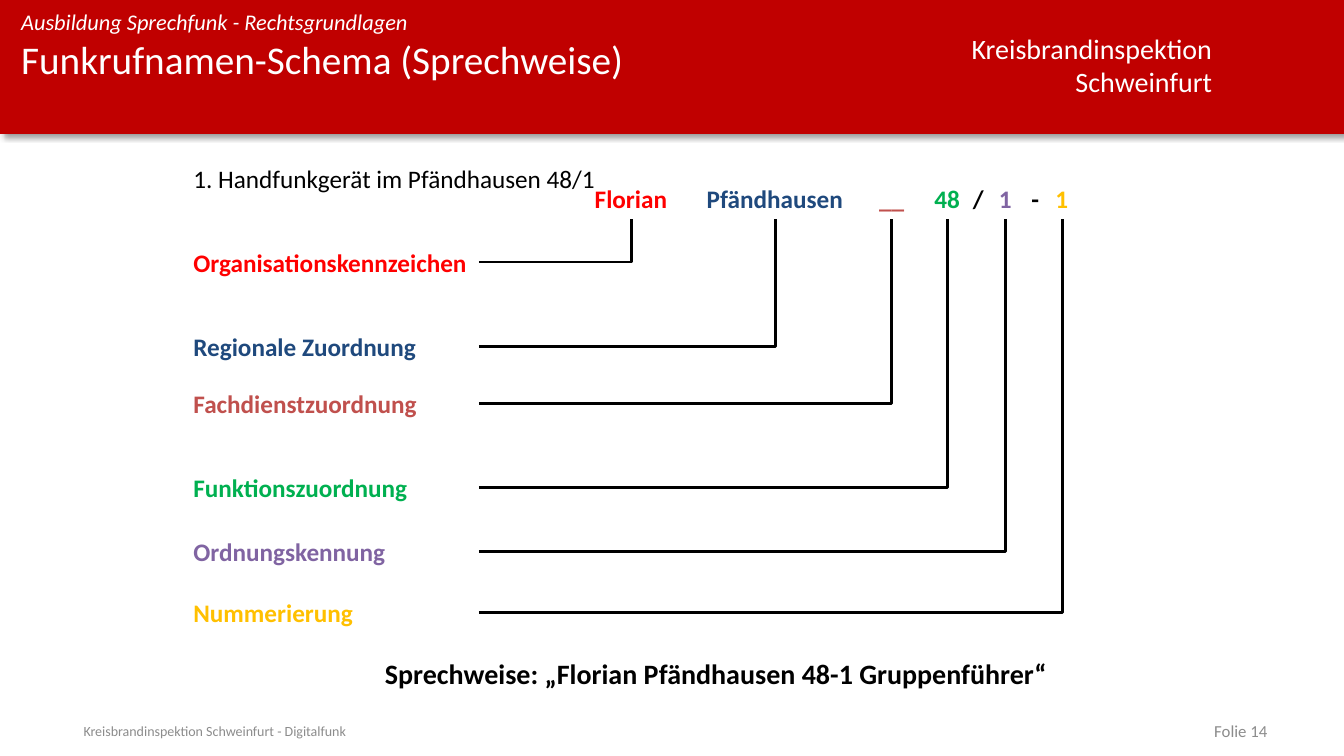
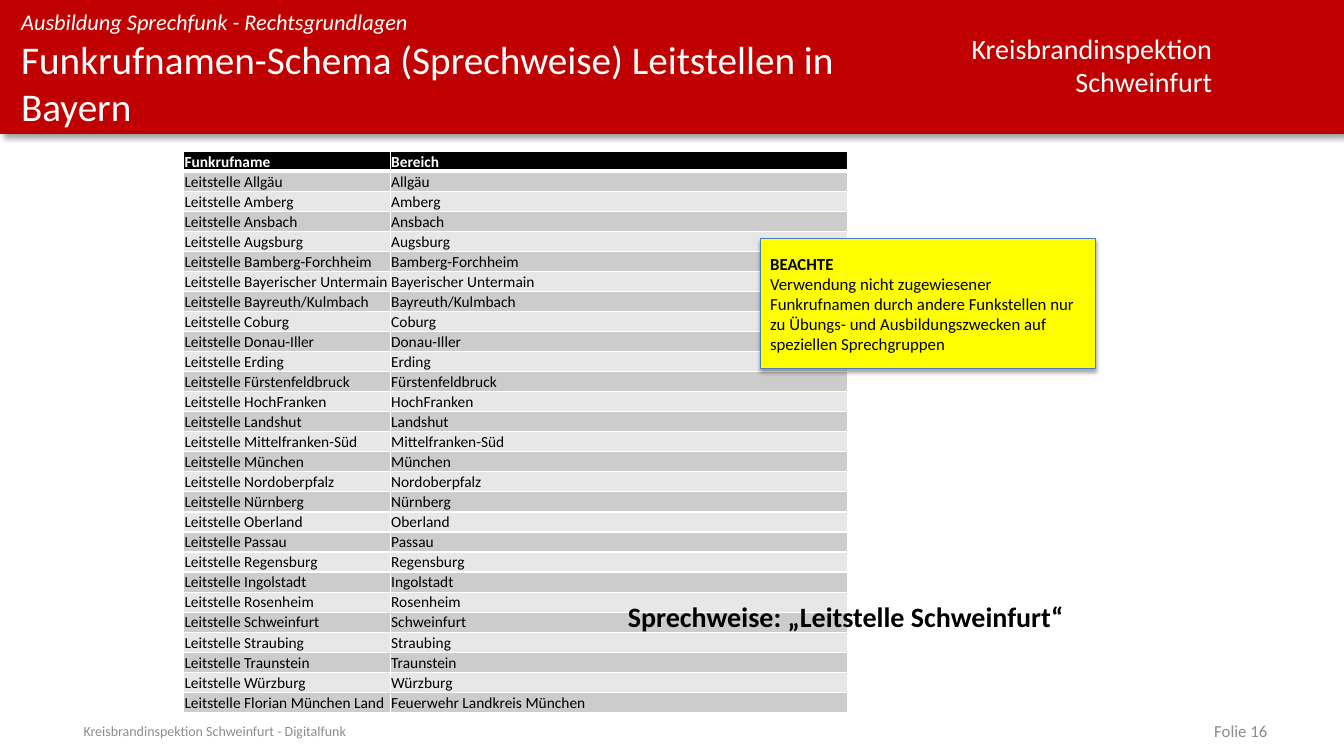
from lxml import etree
from pptx import Presentation
from pptx.dml.color import RGBColor
from pptx.enum.shapes import MSO_CONNECTOR, MSO_SHAPE
from pptx.enum.text import MSO_ANCHOR, MSO_AUTO_SIZE, PP_ALIGN
from pptx.oxml.ns import qn
from pptx.util import Inches, Pt

ELBOW = MSO_CONNECTOR.ELBOW
RECTANGLE = MSO_SHAPE.RECTANGLE
TOP, MIDDLE, BOTTOM = MSO_ANCHOR.TOP, MSO_ANCHOR.MIDDLE, MSO_ANCHOR.BOTTOM
LEFT, RIGHT = PP_ALIGN.LEFT, PP_ALIGN.RIGHT
NO_AUTOFIT = MSO_AUTO_SIZE.NONE

BLACK = RGBColor(0x00, 0x00, 0x00)
WHITE = RGBColor(0xFF, 0xFF, 0xFF)
BAND_RED = RGBColor(0xC0, 0x00, 0x00)
FOOTER_GREY = RGBColor(0x8C, 0x8C, 0x8C)
RED = RGBColor(0xFF, 0x00, 0x00)
NAVY = RGBColor(0x1F, 0x49, 0x7D)
BRICK = RGBColor(0xC0, 0x50, 0x4D)
GREEN = RGBColor(0x00, 0xB0, 0x50)
PURPLE = RGBColor(0x80, 0x64, 0xA2)
AMBER = RGBColor(0xFF, 0xC0, 0x00)
YELLOW = RGBColor(0xFF, 0xFF, 0x00)
NOTE_BLUE = RGBColor(0x4B, 0x7E, 0xBC)
ROW_DARK = RGBColor(0xCC, 0xCC, 0xCC)
ROW_LIGHT = RGBColor(0xE7, 0xE7, 0xE7)


def write(frame, text, size=18, color=BLACK, bold=False, italic=False,
          align=LEFT, anchor=TOP, wrap=True, margins=None):
    frame.word_wrap = wrap
    frame.auto_size = NO_AUTOFIT
    frame.vertical_anchor = anchor
    if margins is not None:
        frame.margin_left = frame.margin_right = Inches(margins)
        frame.margin_top = frame.margin_bottom = Inches(margins)
    for index, line in enumerate(text.split("\n")):
        paragraph = frame.add_paragraph() if index else frame.paragraphs[0]
        paragraph.alignment = align
        run = paragraph.add_run()
        run.text = line
        run.font.name = "Calibri"
        run.font.size = Pt(size)
        run.font.color.rgb = color
        run.font.bold = bold
        run.font.italic = italic


def cast_shadow(shape, blur, distance, angle, opacity):
    shape.shadow.inherit = False
    effects = shape.element.spPr.find(qn("a:effectLst"))
    shadow = etree.SubElement(effects, qn("a:outerShdw"), blurRad=str(Pt(blur)),
                              dist=str(Pt(distance)), dir=str(angle * 60000),
                              algn="tl", rotWithShape="0")
    black = etree.SubElement(shadow, qn("a:srgbClr"), val=str(BLACK))
    etree.SubElement(black, qn("a:alpha"), val=str(opacity * 1000))


prs = Presentation()
prs.slide_width = Inches(13.33)
prs.slide_height = Inches(7.5)
layout = prs.slide_layouts[5]

slides = []
for title, number in [
    ("Funkrufnamen-Schema (Sprechweise)", 14),
    ("Funkrufnamen-Schema (Sprechweise) Leitstellen in Bayern", 16),
]:
    slide = prs.slides.add_slide(layout)
    heading = slide.shapes.title
    heading.left, heading.top = Inches(0.21), Inches(0.35)
    heading.width, heading.height = Inches(8.43), Inches(0.99)
    write(heading.text_frame, title, size=28, color=WHITE, margins=0)
    folio = slide.shapes.add_textbox(Inches(9.56), Inches(7.15), Inches(3.11), Inches(0.2))
    write(folio.text_frame, f"Folie {number}", size=12, color=FOOTER_GREY,
          align=RIGHT, anchor=MIDDLE)
    slides.append(slide)

scheme, centres = slides

band = scheme.shapes.add_shape(RECTANGLE, 0, 0, prs.slide_width, Inches(1.33))
band.fill.solid()
band.fill.fore_color.rgb = BAND_RED
band.line.fill.background()
cast_shadow(band, blur=4, distance=3, angle=45, opacity=40)

authority = scheme.shapes.add_textbox(Inches(9.51), Inches(0.26), Inches(2.61), Inches(0.77))
write(authority.text_frame, "Kreisbrandinspektion\nSchweinfurt", size=20, color=WHITE,
      align=RIGHT, wrap=False)
course = scheme.shapes.add_textbox(Inches(0.21), Inches(0.08), Inches(8.43), Inches(0.27))
write(course.text_frame, "Ausbildung Sprechfunk - Rechtsgrundlagen", size=16, color=WHITE,
      italic=True, margins=0)
footer = scheme.shapes.add_textbox(Inches(0.73), Inches(7.15), Inches(8.05), Inches(0.2))
write(footer.text_frame, "Kreisbrandinspektion Schweinfurt - Digitalfunk", size=10,
      color=FOOTER_GREY, anchor=MIDDLE)
for position, shared in enumerate([band, authority, course, footer], start=2):
    layout.shapes.element.insert(position, shared.element)

example = scheme.shapes.add_textbox(Inches(1.82), Inches(1.57), Inches(4.23), Inches(0.4))
write(example.text_frame, "1. Handfunkgerät im Pfändhausen 48/1", wrap=False)

NAME_TOP = 1.77
LINE_HEIGHT = 0.4
MEANING_LEFT, MEANING_WIDTH = 1.82, 2.93

for part, part_left, part_width, meaning, meaning_top, color in [
    ("Florian", 5.8, 0.92, "Organisationskennzeichen", 2.4, RED),
    ("Pfändhausen", 6.91, 1.57, "Regionale Zuordnung", 3.24, NAVY),
    ("__", 8.62, 0.45, "Fachdienstzuordnung", 3.8, BRICK),
    ("48", 9.17, 0.46, "Funktionszuordnung", 4.64, GREEN),
    ("1", 9.81, 0.33, "Ordnungskennung", 5.27, PURPLE),
    ("1", 10.37, 0.33, "Nummerierung", 5.88, AMBER),
]:
    name = scheme.shapes.add_textbox(Inches(part_left), Inches(NAME_TOP),
                                     Inches(part_width), Inches(LINE_HEIGHT))
    write(name.text_frame, part, color=color, bold=True, wrap=False)
    label = scheme.shapes.add_textbox(Inches(MEANING_LEFT), Inches(meaning_top),
                                      Inches(MEANING_WIDTH), Inches(LINE_HEIGHT))
    write(label.text_frame, meaning, color=color, bold=True)
    link = scheme.shapes.add_connector(
        ELBOW, Inches(MEANING_LEFT + MEANING_WIDTH), Inches(meaning_top + LINE_HEIGHT / 2),
        Inches(part_left + part_width / 2), Inches(NAME_TOP + LINE_HEIGHT))
    link.line.color.rgb = BLACK
    link.line.width = Pt(2)
    properties = link.element.spPr
    properties.find(qn("a:prstGeom")).set("prst", "bentConnector2")
    etree.SubElement(properties, qn("a:effectLst"))

for separator, left, width in [("/", 9.55, 0.31), ("-", 10.13, 0.28)]:
    mark = scheme.shapes.add_textbox(Inches(left), Inches(NAME_TOP),
                                     Inches(width), Inches(LINE_HEIGHT))
    write(mark.text_frame, separator, bold=True, wrap=False)

areas = [
    "Allgäu", "Amberg", "Ansbach", "Augsburg", "Bamberg-Forchheim",
    "Bayerischer Untermain", "Bayreuth/Kulmbach", "Coburg", "Donau-Iller", "Erding",
    "Fürstenfeldbruck", "HochFranken", "Landshut", "Mittelfranken-Süd", "München",
    "Nordoberpfalz", "Nürnberg", "Oberland", "Passau", "Regensburg", "Ingolstadt",
    "Rosenheim", "Schweinfurt", "Straubing", "Traunstein", "Würzburg",
]
entries = [("Funkrufname", "Bereich")]
entries += [(f"Leitstelle {area}", area) for area in areas]
entries.append(("Leitstelle Florian München Land", "Feuerwehr Landkreis München"))

directory = centres.shapes.add_table(len(entries), 2, Inches(1.82), Inches(1.5),
                                     Inches(6.59), Inches(5.42)).table
directory.columns[0].width = Inches(2.05)
directory.columns[1].width = Inches(4.54)
for row, entry in enumerate(entries):
    is_header = row == 0
    fill = BLACK if is_header else ROW_DARK if row % 2 else ROW_LIGHT
    for column, text in enumerate(entry):
        cell = directory.cell(row, column)
        cell.margin_left = cell.margin_right = cell.margin_top = Inches(0.01)
        cell.margin_bottom = 0
        cell.vertical_anchor = BOTTOM
        run = cell.text_frame.paragraphs[0].add_run()
        run.text = text
        run.font.name = "Calibri"
        run.font.size = Pt(11)
        run.font.bold = is_header
        run.font.color.rgb = WHITE if is_header else BLACK
        for side in "LRTB":
            below_header = (is_header and side == "B") or (row == 1 and side == "T")
            border = etree.SubElement(cell._tc.get_or_add_tcPr(), qn(f"a:ln{side}"),
                                      w=str(Pt(3 if below_header else 1)))
            paint = etree.SubElement(border, qn("a:solidFill"))
            etree.SubElement(paint, qn("a:srgbClr"), val=str(WHITE))
        cell.fill.solid()
        cell.fill.fore_color.rgb = fill

for slide, spoken, left, top, width in [
    (scheme, "Sprechweise: „Florian Pfändhausen 48-1 Gruppenführer“", 3.72, 6.46, 6.83),
    (centres, "Sprechweise: „Leitstelle Schweinfurt“", 6.13, 5.9, 4.56),
]:
    phrase = slide.shapes.add_textbox(Inches(left), Inches(top), Inches(width), Inches(0.44))
    write(phrase.text_frame, spoken, size=20, bold=True, wrap=False)

notice = centres.shapes.add_shape(RECTANGLE, Inches(7.54), Inches(2.37),
                                  Inches(3.33), Inches(1.29))
notice.fill.solid()
notice.fill.fore_color.rgb = YELLOW
notice.line.color.rgb = NOTE_BLUE
notice.line.width = Pt(0.75)
cast_shadow(notice, blur=3.1, distance=1.8, angle=90, opacity=35)
write(notice.text_frame,
      "BEACHTE\nVerwendung nicht zugewiesener Funkrufnamen durch andere Funkstellen nur "
      "zu Übungs- und Ausbildungszwecken auf speziellen Sprechgruppen",
      size=12, anchor=MIDDLE)
notice.text_frame.paragraphs[0].runs[0].font.bold = True

prs.save("out.pptx")
